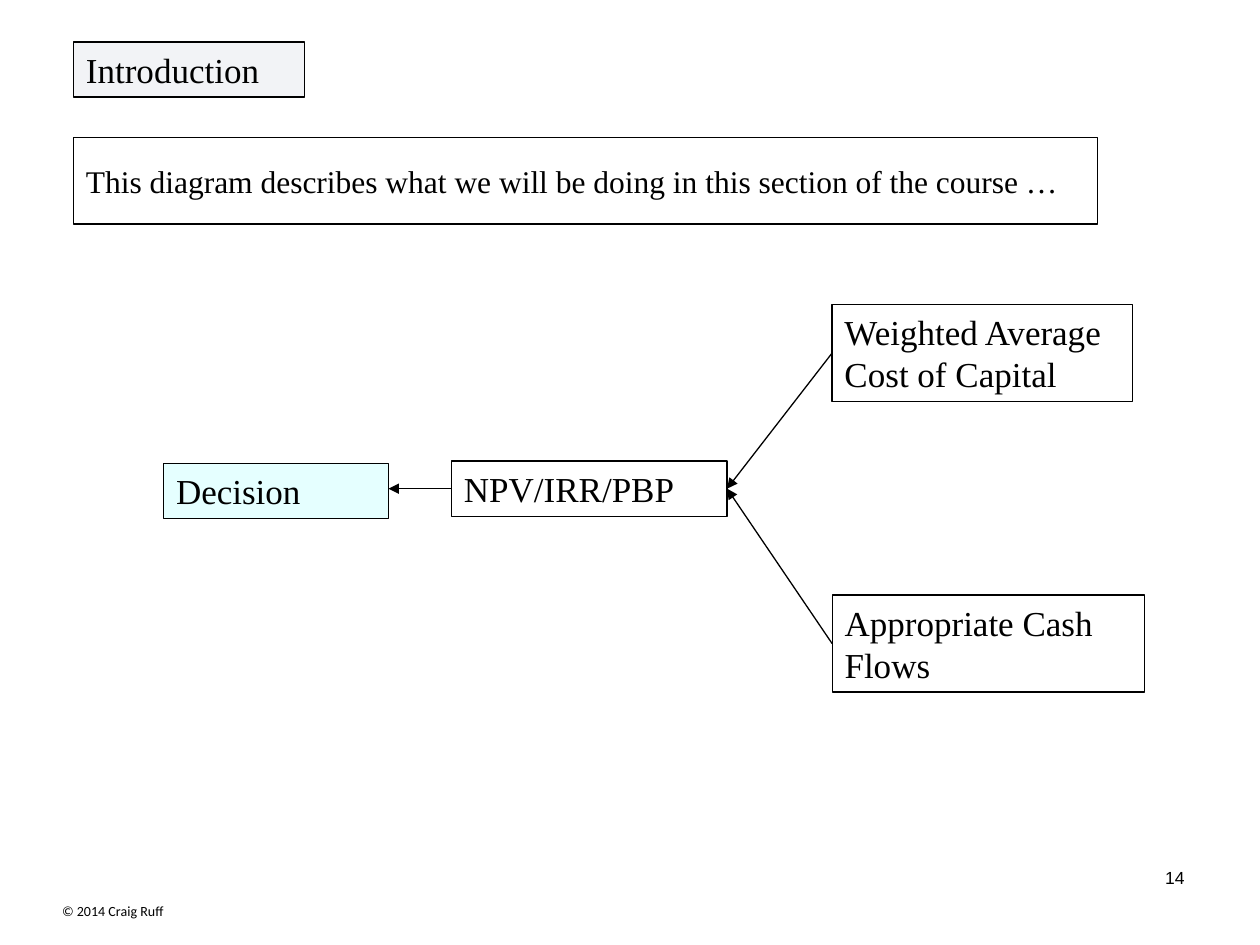
from lxml import etree
from pptx import Presentation
from pptx.dml.color import RGBColor
from pptx.enum.shapes import MSO_CONNECTOR, MSO_SHAPE
from pptx.enum.text import MSO_ANCHOR, PP_ALIGN
from pptx.oxml.ns import qn
from pptx.util import Pt

RECTANGLE = MSO_SHAPE.RECTANGLE
STRAIGHT = MSO_CONNECTOR.STRAIGHT
TOP, MIDDLE = MSO_ANCHOR.TOP, MSO_ANCHOR.MIDDLE
LEFT, CENTER, RIGHT = PP_ALIGN.LEFT, PP_ALIGN.CENTER, PP_ALIGN.RIGHT


def color(hex_string):
    return RGBColor.from_string(hex_string)


class DiagramSlide:
    ink = "000000"
    font = "Times New Roman"
    line_width = 0.75

    def __init__(self, slide):
        self.slide = slide

    def set_text(self, shape, text, size, font, align, anchor):
        frame = shape.text_frame
        frame.word_wrap = True
        frame.vertical_anchor = anchor
        frame.text = text
        paragraph = frame.paragraphs[0]
        paragraph.alignment = align
        style = paragraph.runs[0].font
        style.size, style.name = Pt(size), font
        style.color.rgb = color(self.ink)

    def box(self, text, x, y, width, height, size=20, anchor=TOP, fill=None, opacity=100):
        shape = self.slide.shapes.add_shape(RECTANGLE, Pt(x), Pt(y), Pt(width), Pt(height))
        shape.shadow.inherit = False
        if fill:
            shape.fill.solid()
            shape.fill.fore_color.rgb = color(fill)
            tint = shape._element.spPr.find(qn("a:solidFill"))[0]
            etree.SubElement(tint, qn("a:alpha"), val=str(opacity * 1000))
        else:
            shape.fill.background()
        shape.line.color.rgb = color(self.ink)
        shape.line.width = Pt(self.line_width)
        self.set_text(shape, text, size, self.font, LEFT, anchor)

    def label(self, text, x, y, width, height, size, font, align):
        shape = self.slide.shapes.add_textbox(Pt(x), Pt(y), Pt(width), Pt(height))
        self.set_text(shape, text, size, font, align, TOP)

    def arrow(self, start, end):
        connector = self.slide.shapes.add_connector(STRAIGHT, *map(Pt, start + end))
        connector.line.color.rgb = color(self.ink)
        connector.line.width = Pt(self.line_width)
        properties = connector._element.spPr
        etree.SubElement(properties.find(qn("a:ln")), qn("a:tailEnd"), type="triangle")
        etree.SubElement(properties, qn("a:effectLst"))


def main():
    presentation = Presentation()
    presentation.slide_width, presentation.slide_height = Pt(720), Pt(540)
    page = DiagramSlide(presentation.slides.add_slide(presentation.slide_layouts[6]))

    margin, one_line, two_lines = 42, 31.5, 55.5

    # Heading and lead sentence
    page.box("Introduction", margin, 24, 132, one_line, fill="002060", opacity=5)
    page.box("This diagram describes what we will be doing in this section of the course …",
             margin, 78.5, 585, 49.5, size=18, anchor=MIDDLE)

    # Inputs, methods and decision
    inputs_x, capital_y, flows_y = 475.5, 174, 340
    methods_x, methods_y, methods_width = 258, 263.5, 157.5
    decision_x, decision_width = 93.5, 128.5
    page.box("Weighted Average Cost of Capital", inputs_x, capital_y, 171.5, two_lines)
    page.box("Appropriate Cash Flows", inputs_x, flows_y, 178.5, two_lines)
    page.box("NPV/IRR/PBP", methods_x, methods_y, methods_width, one_line)
    page.box("Decision", decision_x, 265, decision_width, one_line, fill="00FFFF", opacity=10)

    # Arrows from inputs to methods, and on to the decision
    axis_y = methods_y + one_line / 2
    for input_y in (capital_y, flows_y):
        page.arrow((inputs_x, input_y + two_lines / 2), (methods_x + methods_width, axis_y))
    page.arrow((methods_x, axis_y), (decision_x + decision_width, axis_y))

    # Footer
    page.label("14", 534, 492, 150, 36, 10, "Arial", RIGHT)
    page.label("© 2014 Craig Ruff", 21, 512, 87, 17, 8, "Calibri", CENTER)

    presentation.save("out.pptx")


if __name__ == "__main__":
    main()
